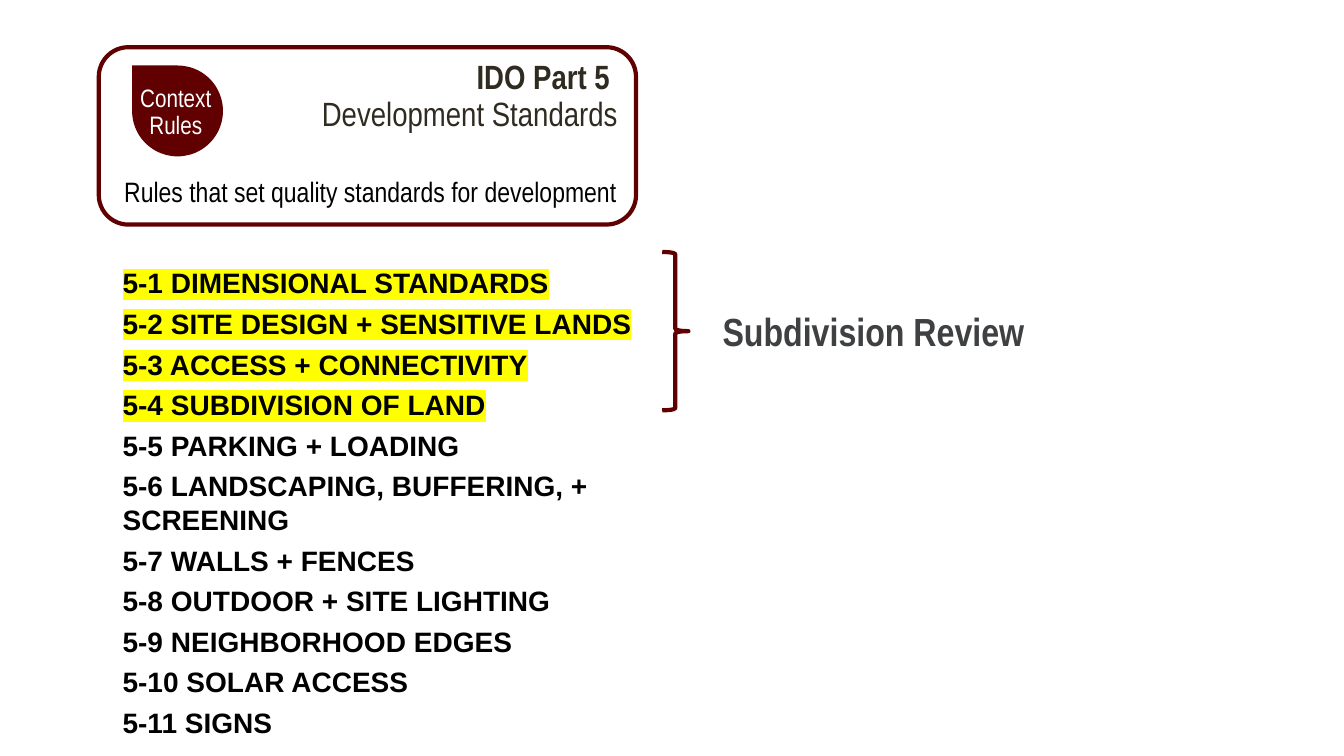
"""Builds a slide on IDO Part 5 Development Standards and subdivision review."""
from dataclasses import dataclass

from lxml.etree import SubElement
from pptx import Presentation
from pptx.dml.color import RGBColor as Rgb
from pptx.enum.shapes import MSO_SHAPE as Preset
from pptx.enum.text import MSO_ANCHOR as Anchor, MSO_AUTO_SIZE as AutoSize, PP_ALIGN as Align
from pptx.oxml.ns import qn
from pptx.util import Cm, Pt

PART = "IDO Part 5 "
PART_NAME = "Development Standards"
PURPOSE = "Rules that set quality standards for development"
BADGE = "Context Rules"
REVIEW = "Subdivision Review"
REVIEWED_SECTIONS = [
    "5-1 DIMENSIONAL STANDARDS",
    "5-2 SITE DESIGN + SENSITIVE LANDS",
    "5-3 ACCESS + CONNECTIVITY",
    "5-4 SUBDIVISION OF LAND",
]
OTHER_SECTIONS = [
    "5-5 PARKING + LOADING",
    "5-6 LANDSCAPING, BUFFERING, + SCREENING",
    "5-7 WALLS + FENCES",
    "5-8 OUTDOOR + SITE LIGHTING",
    "5-9 NEIGHBORHOOD EDGES",
    "5-10 SOLAR ACCESS",
    "5-11 SIGNS",
]

CARD_AREA = (2.49, 1.19, 13.54, 4.47)
PURPOSE_AREA = (2.79, 3.71, 13.0, 2.21)
DROP_AREA = (3.33, 1.65, 2.29, 2.29)
BADGE_AREA = (3.25, 2.03, 2.36, 1.7)
SECTIONS_AREA = (2.84, 6.35, 15.9, 12.4)
BRACE_AREA = (16.69, 6.35, 0.66, 3.99)
REVIEW_AREA = (17.96, 7.62, 8.61, 1.45)


@dataclass(frozen=True)
class Theme:
    maroon: str = "600000"
    white: str = "FFFFFF"
    black: str = "000000"
    olive: str = "2F2B20"
    slate: str = "3E4042"
    yellow: str = "FFFF00"
    narrow: str = "Arial Narrow"
    wide: str = "Arial"
    badge: int = 18
    body: int = 20
    title: int = 24
    review: int = 28
    outline: int = 3
    section_gap: int = 5
    tight: float = 0.9


THEME = Theme()


def add_preset(slide, preset, area, fill=None, outline=None):
    shape = slide.shapes.add_shape(preset, *map(Cm, area))
    shape.shadow.inherit = False
    if fill:
        shape.fill.solid()
        shape.fill.fore_color.rgb = Rgb.from_string(fill)
    else:
        shape.fill.background()
    if outline:
        shape.line.color.rgb = Rgb.from_string(outline)
        shape.line.width = Pt(THEME.outline)
    else:
        shape.line.fill.background()
    return shape


def write(shape, lines, size, color, face=THEME.narrow, bold=False,
          align=Align.LEFT, anchor=Anchor.TOP, spacing=None, gap=0):
    frame = shape.text_frame
    frame.word_wrap = True
    frame.vertical_anchor = anchor
    frame.text = "\n".join(lines)
    for order, paragraph in enumerate(frame.paragraphs):
        paragraph.alignment = align
        paragraph.line_spacing = spacing
        paragraph.space_before = Pt(gap if order else 0)
        font = paragraph.font
        font.name, font.size, font.bold = face, Pt(size), bold
        font.color.rgb = Rgb.from_string(color)
    return frame


def add_text(slide, area, *content, **style):
    return write(slide.shapes.add_textbox(*map(Cm, area)), *content, **style)


def highlight(paragraph):
    for run in paragraph.runs:
        marker = SubElement(run.font._element, qn("a:highlight"))
        SubElement(marker, qn("a:srgbClr")).set("val", THEME.yellow)


def main():
    deck = Presentation()
    deck.slide_width, deck.slide_height = Cm(33.87), Cm(19.05)
    slide = deck.slides.add_slide(deck.slide_layouts[6])

    card = add_preset(slide, Preset.ROUNDED_RECTANGLE, CARD_AREA, THEME.white, THEME.maroon)
    heading = write(card, [PART, PART_NAME], THEME.title, THEME.olive,
                    align=Align.RIGHT, spacing=THEME.tight)
    heading.paragraphs[0].font.bold = True
    add_text(slide, PURPOSE_AREA, [PURPOSE], THEME.body, THEME.black,
             align=Align.RIGHT, anchor=Anchor.MIDDLE)

    drop = add_preset(slide, Preset.TEAR, DROP_AREA, THEME.maroon)
    drop.rotation = 270
    badge = add_text(slide, BADGE_AREA, [BADGE], THEME.badge, THEME.white,
                     align=Align.CENTER, spacing=THEME.tight)
    badge.auto_size = AutoSize.SHAPE_TO_FIT_TEXT

    sections = add_text(slide, SECTIONS_AREA, REVIEWED_SECTIONS + OTHER_SECTIONS,
                        THEME.body, THEME.black, face=THEME.wide, bold=True,
                        anchor=Anchor.BOTTOM, gap=THEME.section_gap)
    for paragraph in sections.paragraphs[:len(REVIEWED_SECTIONS)]:
        highlight(paragraph)

    add_preset(slide, Preset.RIGHT_BRACE, BRACE_AREA, outline=THEME.maroon)
    review = add_text(slide, REVIEW_AREA, [REVIEW], THEME.review, THEME.slate, bold=True)
    review.auto_size = AutoSize.SHAPE_TO_FIT_TEXT

    deck.save("out.pptx")


if __name__ == "__main__":
    main()
